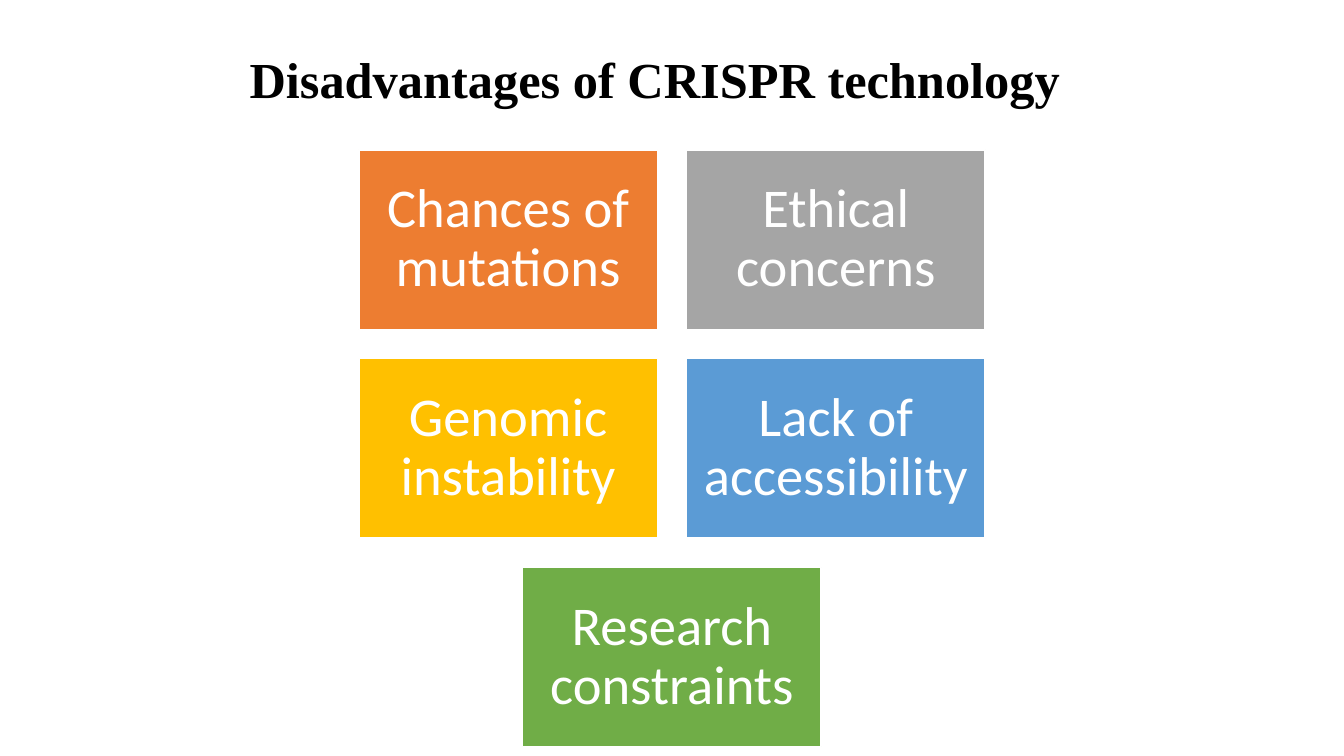
import pptx
import pptx.dml.color
import pptx.enum.shapes
import pptx.enum.text
import pptx.util

Cm = pptx.util.Cm
Pt = pptx.util.Pt

SLIDE_WIDTH, SLIDE_HEIGHT = 33.87, 19.05
CARD_WIDTH, CARD_HEIGHT = 7.52, 4.52
CARD_GAP = 0.74
CARDS_TOP = 3.78
CARD_ROWS = [
    [("Chances of mutations", "ED7D31"), ("Ethical concerns", "A5A5A5")],
    [("Genomic instability", "FFC000"), ("Lack of accessibility", "5B9BD5")],
    [("Research constraints", "70AD47")],
]


def color(hex_value):
    return pptx.dml.color.RGBColor.from_string(hex_value)


def write_text(frame, text, *, size, font, ink, bold=False, align="LEFT"):
    frame.word_wrap = True
    frame.vertical_anchor = pptx.enum.text.MSO_ANCHOR.MIDDLE
    paragraph = frame.paragraphs[0]
    paragraph.alignment = pptx.enum.text.PP_ALIGN[align]
    paragraph.line_spacing = 0.9
    run = paragraph.add_run()
    run.text = text
    run.font.size = Pt(size)
    run.font.name = font
    run.font.bold = bold
    run.font.color.rgb = color(ink)


def add_title(slide, text):
    title = slide.shapes.add_textbox(Cm(0.3), Cm(0.23), Cm(29.21), Cm(3.68))
    title.text_frame.margin_left = Cm(5.99)
    write_text(title.text_frame, text, size=36, font="Times New Roman",
               ink="000000", bold=True)


def add_card(slide, text, fill, left, top):
    card = slide.shapes.add_shape(
        pptx.enum.shapes.MSO_SHAPE.RECTANGLE,
        Cm(left), Cm(top), Cm(CARD_WIDTH), Cm(CARD_HEIGHT))
    card.shadow.inherit = False
    card.fill.solid()
    card.fill.fore_color.rgb = color(fill)
    card.line.color.rgb = color("FFFFFF")
    card.line.width = Pt(1)
    frame = card.text_frame
    frame.margin_left = frame.margin_right = Cm(0.4)
    frame.margin_top = frame.margin_bottom = Cm(0.4)
    write_text(frame, text, size=39, font="Calibri", ink="FFFFFF",
               align="CENTER")


def add_card_rows(slide):
    """Centre every row of cards across the slide."""
    for row, cards in enumerate(CARD_ROWS):
        row_width = len(cards) * (CARD_WIDTH + CARD_GAP) - CARD_GAP
        row_left = (SLIDE_WIDTH - row_width) / 2
        top = CARDS_TOP + row * (CARD_HEIGHT + CARD_GAP)
        for column, (text, fill) in enumerate(cards):
            left = row_left + column * (CARD_WIDTH + CARD_GAP)
            add_card(slide, text, fill, left, top)


def main():
    deck = pptx.Presentation()
    deck.slide_width = Cm(SLIDE_WIDTH)
    deck.slide_height = Cm(SLIDE_HEIGHT)
    slide = deck.slides.add_slide(deck.slide_layouts[6])
    add_title(slide, "Disadvantages of CRISPR technology")
    add_card_rows(slide)
    deck.save("out.pptx")


if __name__ == "__main__":
    main()
